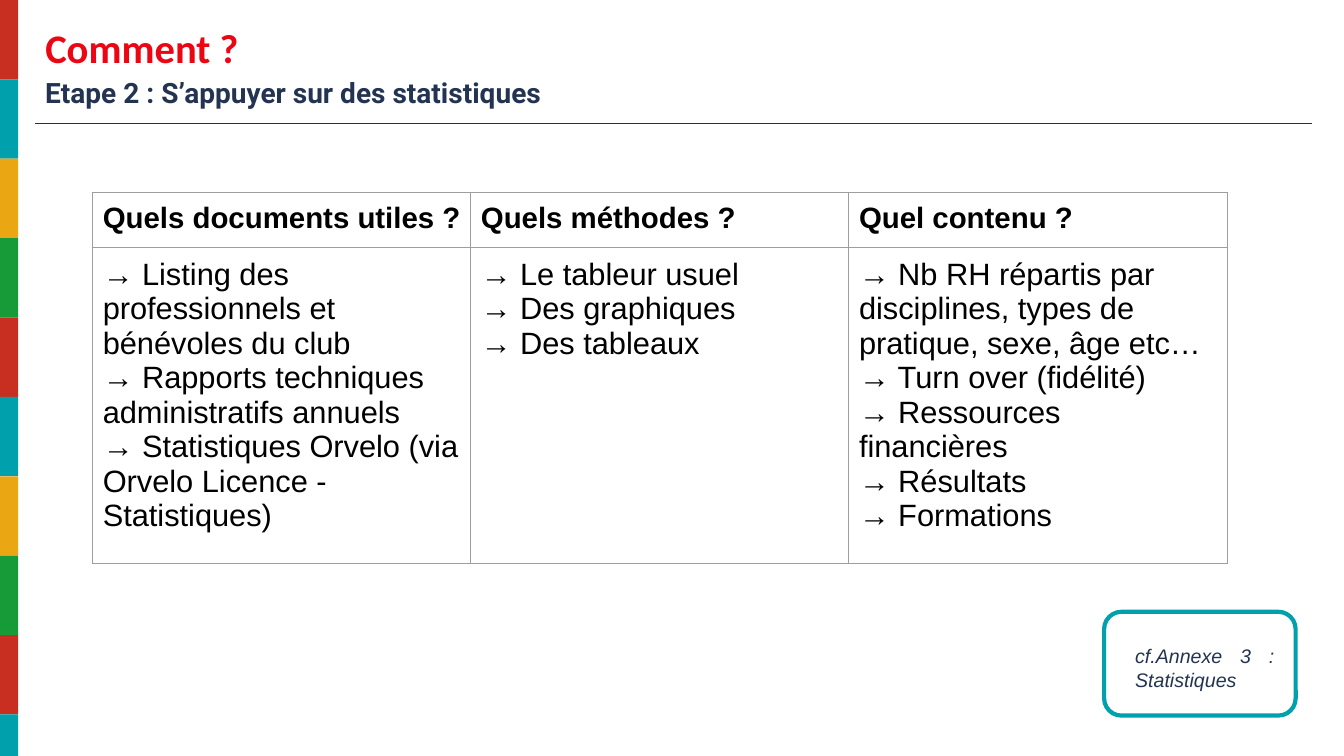
from itertools import cycle
from lxml import etree
from pptx import Presentation
from pptx import util as u
from pptx.dml.color import RGBColor
from pptx.enum import shapes, text
from pptx.oxml import ns

WIDE, HIGH = u.Inches(13.33), u.Inches(7.5)
TEAL, NAVY = "00A1AC", "233352"
BANDS = ["C92F20", TEAL, "EBA613", "179A38"]
LEFT = 2.63

TABLE = {
    "Quels documents utiles ?": [
        "→ Listing des professionnels et bénévoles du club",
        "→ Rapports techniques administratifs annuels",
        "→ Statistiques Orvelo (via Orvelo Licence - Statistiques)",
    ],
    "Quels méthodes ?": [
        "→ Le tableur usuel",
        "→ Des graphiques",
        "→ Des tableaux",
    ],
    "Quel contenu ?": [
        "→ Nb RH répartis par disciplines, types de pratique, sexe, âge etc…",
        "→ Turn over (fidélité)",
        "→ Ressources financières",
        "→ Résultats",
        "→ Formations",
    ],
}


def across(share):
    """Percentage of the slide's width."""
    return int(WIDE * share / 100)


def down(share):
    """Percentage of the slide's height."""
    return int(HIGH * share / 100)


def place(x, y, w, h):
    return across(x), down(y), across(w), down(h)


def color(code):
    return RGBColor.from_string(code)


def write(frame, lines, font, size, code, bold=False, italic=False, align=None):
    frame.word_wrap = True
    for i, line in enumerate(lines):
        par = frame.add_paragraph() if i else frame.paragraphs[0]
        par.text = line
        par.alignment = align
        par.font.name, par.font.size = font, u.Pt(size)
        par.font.bold, par.font.italic = bold, italic
        par.font.color.rgb = color(code)


def label(slide, box, line, font, size, code, inset=0.05, **style):
    frame = slide.shapes.add_textbox(*place(*box)).text_frame
    frame.margin_top = frame.margin_bottom = u.Inches(inset)
    frame.vertical_anchor = text.MSO_ANCHOR.MIDDLE
    write(frame, [line], font, size, code, **style)


def stripes(slide, step=10.5):
    """Colour bands down the left edge, the last one cut by the slide."""
    for i, code in zip(range(10), cycle(BANDS)):
        top = i * step
        band = slide.shapes.add_shape(
            shapes.MSO_SHAPE.RECTANGLE, *place(0, top, 1.35, min(step, 100 - top)))
        band.shadow.inherit = False
        band.fill.solid()
        band.fill.fore_color.rgb = color(code)
        band.line.fill.background()


def rule(slide, x, y, end):
    line = slide.shapes.add_connector(
        shapes.MSO_CONNECTOR.STRAIGHT, across(x), down(y), across(end), down(y))
    line.line.color.rgb = color("21304E")
    line.line.width = u.Pt(0.75)
    etree.SubElement(line.element.spPr, ns.qn("a:effectLst"))


def frame(slide, box):
    """Rounded outline without fill."""
    shape = slide.shapes.add_shape(shapes.MSO_SHAPE.ROUNDED_RECTANGLE, *place(*box))
    shape.shadow.inherit = False
    shape.fill.background()
    shape.line.color.rgb = color(TEAL)
    shape.line.width = u.Pt(3)


def border(cell, code="9E9E9E"):
    props = cell._tc.get_or_add_tcPr()
    for i, side in enumerate(("lnL", "lnR", "lnT", "lnB")):
        edge = etree.Element(ns.qn(f"a:{side}"), w=str(u.Pt(0.75)))
        fill = etree.SubElement(edge, ns.qn("a:solidFill"))
        etree.SubElement(fill, ns.qn("a:srgbClr"), val=code)
        props.insert(i, edge)


def fill_cell(cell, lines, size, bold):
    cell.fill.background()
    cell.margin_left = cell.margin_right = u.Inches(0.1)
    cell.margin_top = cell.margin_bottom = u.Inches(0.1)
    write(cell.text_frame, lines, "Arial", size, "000000", bold=bold)
    border(cell)


def grid(slide, x, y, width, rows):
    table = slide.shapes.add_table(
        len(rows), len(TABLE), *place(x, y, width, sum(rows))).table
    table.horz_banding = table.first_row = False
    for row, share in zip(table.rows, rows):
        row.height = down(share)
    for i, (head, lines) in enumerate(TABLE.items()):
        table.columns[i].width = across(width / len(TABLE))
        fill_cell(table.cell(0, i), [head], 21, True)
        fill_cell(table.cell(1, i), lines, 22, False)


def main():
    deck = Presentation()
    deck.slide_width, deck.slide_height = WIDE, HIGH
    slide = deck.slides.add_slide(deck.slide_layouts[6])
    stripes(slide)
    label(slide, (LEFT, 1.87, 94.97, 8.67), "Comment ?",
          "Calibri", 29, "EC0614", bold=True)
    label(slide, (LEFT, 9.33, 88.67, 5.87), "Etape 2 : S’appuyer sur des statistiques",
          "Roboto", 20, NAVY, bold=True)
    rule(slide, LEFT, 16.4, 97.6)
    frame(slide, (82.15, 80.93, 14.25, 13.73))
    label(slide, (83.72, 83.87, 11.85, 8.93), "cf.Annexe 3 : Statistiques",
          "Arial", 14, NAVY, inset=0.1, italic=True, align=text.PP_ALIGN.JUSTIFY)
    grid(slide, 6.9, 25.4, 84.4, (7.33, 41.73))
    deck.save("out.pptx")


if __name__ == "__main__":
    main()
